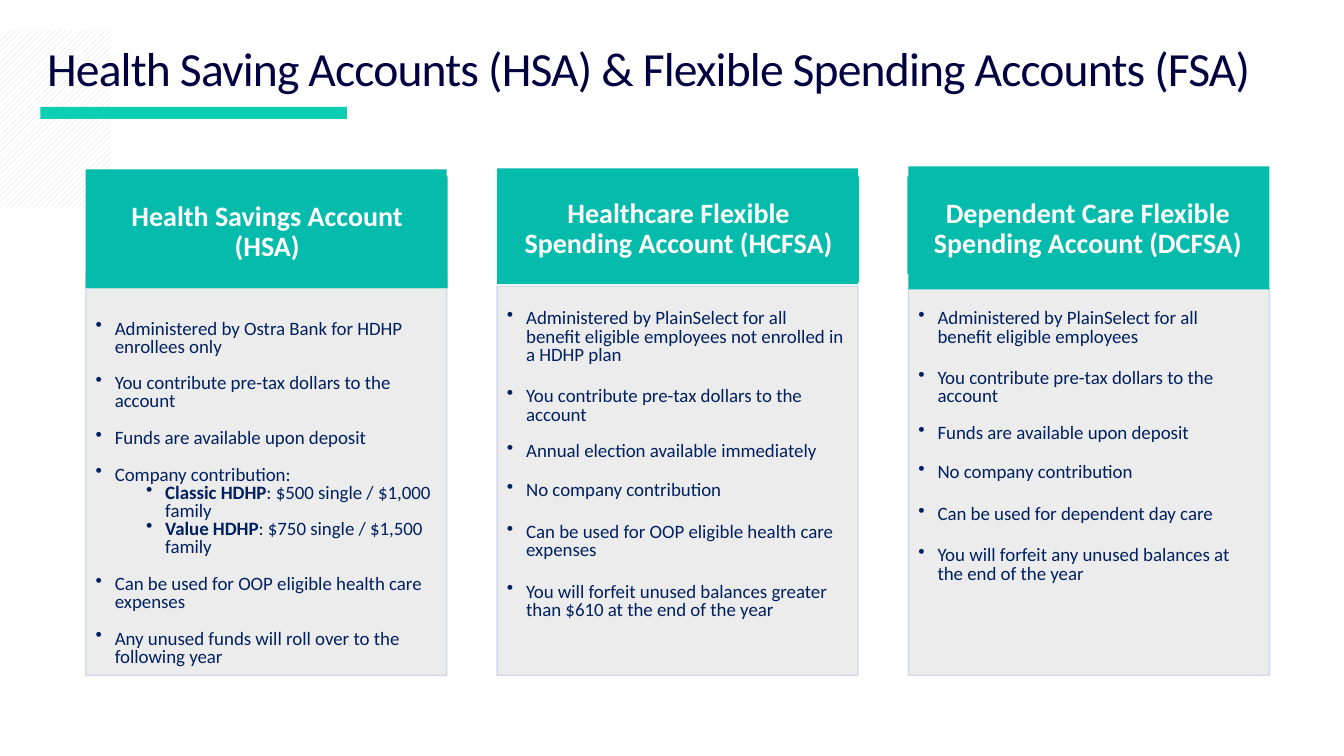
"""Slide comparing a health savings account with two flexible spending accounts."""
import pptx
import pptx.dml.color
import pptx.enum.dml
import pptx.enum.shapes
import pptx.enum.text
import pptx.oxml.ns
import pptx.util
from lxml import etree

INKS = {"teal": "05BBAC", "bar": "0CCEB2", "panel": "EAEAEA", "edge": "CFD5EA",
        "hatch": "D9D9D9", "title": "000041", "body": "002060", "white": "FFFFFF"}
LEFT, STEP, WIDE, BASE = 8.5, 40.8, 35.8, 67

PLANS = [
    {"name": "Health Savings Account (HSA)", "cap": (16.8, 11.8),
     "label": (0.1, 11.1, 0.12), "top": 27.2, "list": 30.8,
     "points": [
         (0, 0, "Administered by Ostra Bank for HDHP enrollees only"),
         (13.2, 0, "You contribute pre-tax dollars to the account"),
         (13.2, 0, "Funds are available upon deposit"),
         (13.2, 0, "Company contribution:"),
         (0, 1, "*Classic HDHP*: $500 single / $1,000 family"),
         (0, 1, "*Value HDHP*: $750 single / $1,500 family"),
         (13.2, 0, "Can be used for OOP eligible health care expenses"),
         (13.2, 0, "Any unused funds will roll over to the following year")]},
    {"name": "Healthcare Flexible Spending Account (HCFSA)", "cap": (16.7, 11.5),
     "label": (0.1, 10.5, 0.12), "top": 28.4, "list": 29.8,
     "points": [
         (0, 0, "Administered by PlainSelect for all benefit eligible "
                "employees not enrolled in a HDHP plan"),
         (16.8, 0, "You contribute pre-tax dollars to the account"),
         (13.2, 0, "Annual election available immediately"),
         (15, 0, "No company contribution"),
         (16.8, 0, "Can be used for OOP eligible health care expenses"),
         (16.8, 0, "You will forfeit unused balances greater than $610 "
                   "at the end of the year")]},
    {"name": "Dependent Care Flexible Spending Account (DCFSA)", "cap": (16.5, 12.2),
     "label": (-0.1, 9.7, 0.21), "top": 28.6, "list": 29.8,
     "points": [
         (0, 0, "Administered by PlainSelect for all benefit eligible employees"),
         (16.8, 0, "You contribute pre-tax dollars to the account"),
         (13.2, 0, "Funds are available upon deposit"),
         (15, 0, "No company contribution"),
         (16.8, 0, "Can be used for dependent day care"),
         (16.8, 0, "You will forfeit any unused balances at the end of the year")]},
]


def ink(name):
    return pptx.dml.color.RGBColor.from_string(INKS[name])


def fade(part, share):
    for color in part.iter(pptx.oxml.ns.qn("a:srgbClr")):
        alpha = etree.SubElement(color, pptx.oxml.ns.qn("a:alpha"))
        alpha.set("val", str(share * 1000))


def write(para, text, size=13.5, color="body", bold=False, lead=0.9, gap=0,
          align=None, level=0, bullet=False, track=0):
    para.line_spacing = lead
    para.space_before = pptx.util.Pt(gap)
    para.alignment = align
    if bullet:
        para.level = level + 1
        props = para._p.get_or_add_pPr()
        props.set("marL", str(pptx.util.Inches(0.19 + 0.5 * level)))
        props.set("indent", str(pptx.util.Inches(-0.19)))
        mark = etree.SubElement(props, pptx.oxml.ns.qn("a:buChar"))
        mark.set("char", "•")
    for turn, piece in enumerate(text.split("*")):
        run = para.add_run()
        run.text = piece
        run.font.name = "Calibri"
        run.font.size = pptx.util.Pt(size)
        run.font.bold = bold or turn % 2 == 1
        run.font.color.rgb = ink(color)
        if track:
            run.font._element.set("spc", str(track))


class Board:
    """Holds the slide, its font style and a grid of 0.1 inch cells."""

    def __init__(self, slide):
        self.slide = slide
        self.cell = pptx.util.Inches(0.1)

    def place(self, *cells):
        return [round(self.cell * n) for n in cells]

    def rect(self, col, row, cols, rows, fill):
        kind = pptx.enum.shapes.MSO_SHAPE.RECTANGLE
        shape = self.slide.shapes.add_shape(kind, *self.place(col, row, cols, rows))
        shape.shadow.inherit = False
        shape.fill.solid()
        shape.fill.fore_color.rgb = ink(fill)
        shape.line.fill.background()
        return shape

    def hatch(self, *cells):
        fill = self.rect(*cells, "white").fill
        fill.patterned()
        fill.pattern = pptx.enum.dml.MSO_PATTERN.WIDE_UPWARD_DIAGONAL
        fill.fore_color.rgb = ink("hatch")
        fill.back_color.rgb = ink("white")

    def panel(self, *cells):
        shape = self.rect(*cells, "panel")
        shape.line.color.rgb = ink("edge")
        shape.line.width = pptx.util.Pt(1)
        fade(shape._element.spPr, 90)

    def frame(self, shape, left, top, right, bottom, middle=True):
        frame = shape.text_frame
        frame.word_wrap = True
        frame.margin_left, frame.margin_top, frame.margin_right, frame.margin_bottom = (
            pptx.util.Inches(n) for n in (left, top, right, bottom))
        anchor = pptx.enum.text.MSO_ANCHOR
        frame.vertical_anchor = anchor.MIDDLE if middle else anchor.TOP
        return frame

    def title(self, text, *cells):
        box = self.slide.shapes.add_textbox(*self.place(*cells))
        frame = self.frame(box, 0.1, 0.05, 0.1, 0.05)
        write(frame.paragraphs[0], text, size=34, color="title", track=-60)

    def label(self, text, inset, *cells):
        frame = self.frame(self.rect(*cells, "teal"), 0.22, inset, 0.22, 0.12)
        write(frame.paragraphs[0], text, size=20, color="white", bold=True,
              align=pptx.enum.text.PP_ALIGN.CENTER)

    def points(self, items, *cells):
        box = self.slide.shapes.add_textbox(*self.place(*cells))
        frame = self.frame(box, 0.1, 0.1, 0.14, 0.16, middle=False)
        for turn, (gap, level, text) in enumerate(items):
            para = frame.add_paragraph() if turn else frame.paragraphs[0]
            write(para, text, lead=0.8, gap=gap, level=level, bullet=True)


def main():
    deck = pptx.Presentation()
    deck.slide_width = pptx.util.Inches(13.33)
    deck.slide_height = pptx.util.Inches(7.5)
    board = Board(deck.slides.add_slide(deck.slide_layouts[6]))
    board.hatch(0, 3, 11, 17.6)
    board.rect(4, 10.6, 30.4, 1.2, "bar")
    board.title("Health Saving Accounts (HSA) & Flexible Spending Accounts (FSA)",
                3.7, 1.6, 122.1, 10.9)
    for turn, plan in enumerate(PLANS):
        col = LEFT + STEP * turn
        row, rows = plan["cap"]
        nudge, tall, inset = plan["label"]
        board.panel(col, plan["top"], WIDE, BASE - plan["top"])
        board.points(plan["points"], col, plan["list"], WIDE, BASE - plan["list"])
        board.rect(col, row, WIDE, rows, "teal")
        board.label(plan["name"], inset, col + nudge, 17.5, WIDE, tall)
    deck.save("out.pptx")


if __name__ == "__main__":
    main()
